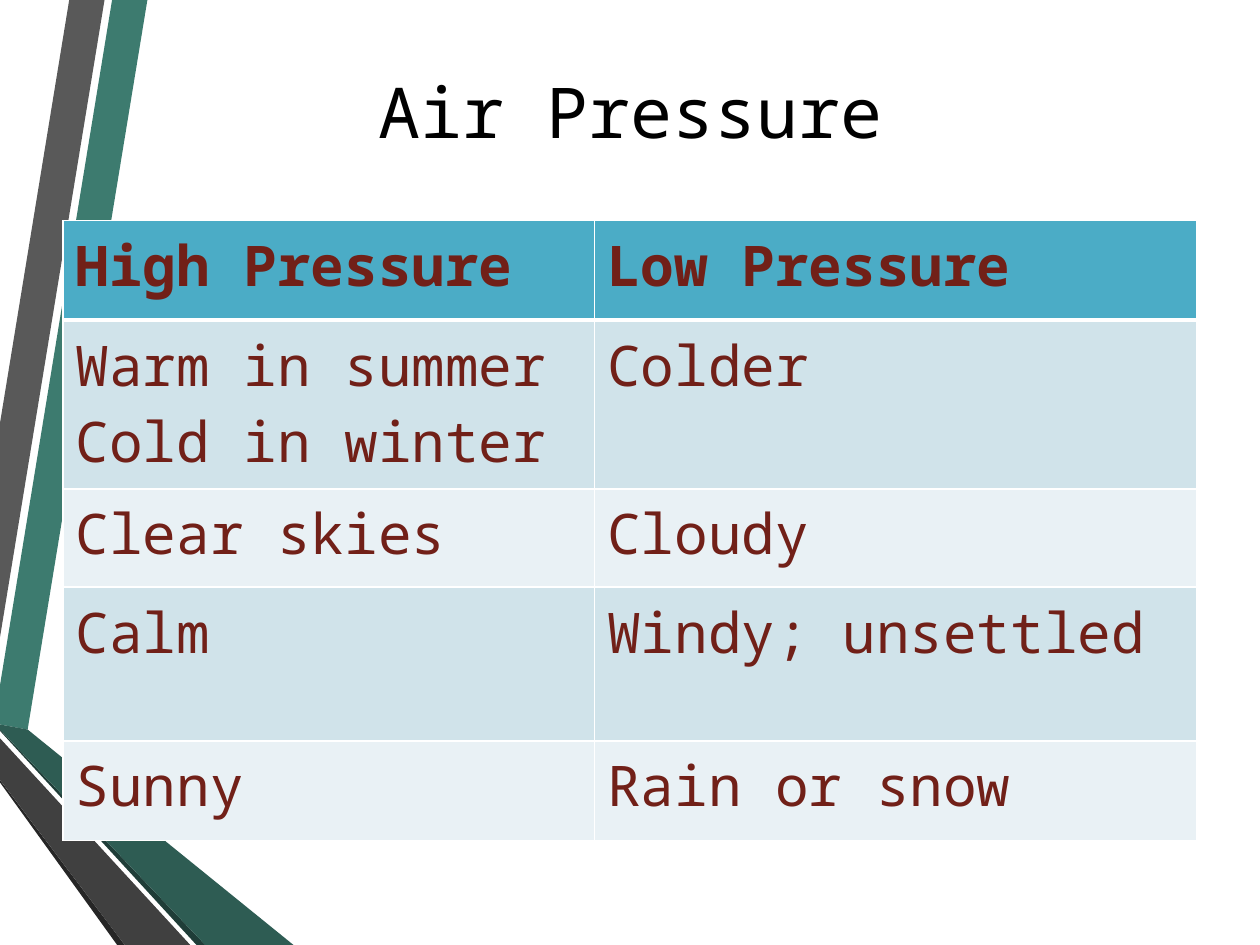
from dataclasses import dataclass

from lxml.etree import SubElement
from pptx import Presentation
from pptx.dml.color import RGBColor
from pptx.enum.text import MSO_ANCHOR, PP_ALIGN
from pptx.oxml.ns import qn
from pptx.util import Inches, Pt


@dataclass(frozen=True)
class Theme:
    font: str = "Noto Sans Mono"
    title_size: int = 40
    table_size: int = 32
    title: str = "000000"
    table_text: str = "712018"
    header: str = "4BACC6"
    bands: tuple = ("D0E3EA", "E9F1F5")
    border: str = "FFFFFF"
    thin: int = 1
    thick: int = 3


class Deck:
    """Draws on a grid ten columns wide, with square cells."""

    def __init__(self, theme, columns=10, rows=7.5):
        self.theme = theme
        self.presentation = Presentation()
        self.presentation.slide_width = Inches(10)
        self.presentation.slide_height = Inches(7.5)
        self.unit = self.presentation.slide_width / columns
        self.bottom = rows
        self.slide = None

    def grid(self, *cells):
        return [round(cell * self.unit) for cell in cells]

    def add_slide(self):
        self.slide = self.presentation.slides.add_slide(self.presentation.slide_layouts[6])

    def style(self, paragraph, size, color, bold=False):
        for run in paragraph.runs:
            run.font.name = self.theme.font
            run.font.size = Pt(size)
            run.font.bold = bold
            run.font.color.rgb = RGBColor.from_string(color)

    def ribbon(self, color, corners):
        start, *others = [self.grid(*corner) for corner in corners]
        builder = self.slide.shapes.build_freeform(*start)
        builder.add_line_segments(others, close=True)
        band = builder.convert_to_shape()
        band.shadow.inherit = False
        band.fill.solid()
        band.fill.fore_color.rgb = RGBColor.from_string(color)
        band.line.fill.background()

    def title(self, wording, left, top, width, height):
        frame = self.slide.shapes.add_textbox(*self.grid(left, top, width, height)).text_frame
        frame.word_wrap = True
        frame.vertical_anchor = MSO_ANCHOR.MIDDLE
        frame.text = wording
        heading = frame.paragraphs[0]
        heading.alignment = PP_ALIGN.CENTER
        self.style(heading, self.theme.title_size, self.theme.title)

    def borders(self, cell, top, bottom):
        properties = cell._tc.get_or_add_tcPr()
        thin = self.theme.thin
        for side, width in (("L", thin), ("R", thin), ("T", top), ("B", bottom)):
            line = SubElement(properties, qn(f"a:ln{side}"), w=str(Pt(width)))
            fill = SubElement(line, qn("a:solidFill"))
            SubElement(fill, qn("a:srgbClr"), val=self.theme.border)

    def table(self, entries, left, top, widths, heights):
        theme = self.theme
        box = self.grid(left, top, sum(widths), sum(heights))
        table = self.slide.shapes.add_table(len(heights), len(widths), *box).table
        for column, width in zip(table.columns, self.grid(*widths)):
            column.width = width
        for row, height in zip(table.rows, self.grid(*heights)):
            row.height = height
        for r, row_entries in enumerate(entries):
            for c, wording in enumerate(row_entries):
                cell = table.cell(r, c)
                cell.text = wording
                for paragraph in cell.text_frame.paragraphs:
                    self.style(paragraph, theme.table_size, theme.table_text, bold=r == 0)
                self.borders(cell,
                             top=theme.thick if r == 1 else theme.thin,
                             bottom=theme.thick if r == 0 else theme.thin)
                cell.fill.solid()
                color = theme.bands[(r - 1) % 2] if r else theme.header
                cell.fill.fore_color.rgb = RGBColor.from_string(color)

    def save(self):
        self.presentation.save("out.pptx")


def main():
    deck = Deck(Theme())
    deck.add_slide()
    floor = deck.bottom

    ribbons = (
        ("3D7B6F", [(0, 5.44), (0, 5.75), (0.22, 5.79), (1.17, 0), (0.89, 0)]),
        ("595959", [(0.83, 0), (0.55, 0), (0, 3.36), (0, 5.06)]),
        ("262626", [(0, 6.19), (0, 6.21), (0.93, floor), (0.99, floor)]),
        ("1F3D38", [(0, 5.79), (0, 5.8), (1.56, floor), (1.63, floor)]),
        ("2E5C53", [(0, 5.79), (1.63, floor), (2.33, floor), (0.22, 5.79), (0, 5.75)]),
        ("404040", [(0, 6.19), (0.99, floor), (1.51, floor), (0, 5.86)]),
    )
    for color, corners in ribbons:
        deck.ribbon(color, corners)

    deck.title("Air Pressure", left=0.5, top=0.25, width=9, height=1.25)

    weather = (
        ("High Pressure", "Low Pressure"),
        ("Warm in summer\nCold in winter", "Colder"),
        ("Clear skies", "Cloudy"),
        ("Calm", "Windy; unsettled"),
        ("Sunny", "Rain or snow"),
    )
    deck.table(weather, left=0.5, top=1.75, widths=(4.22, 4.78),
               heights=(0.79, 1.34, 0.78, 1.22, 0.79))
    deck.save()


if __name__ == "__main__":
    main()
